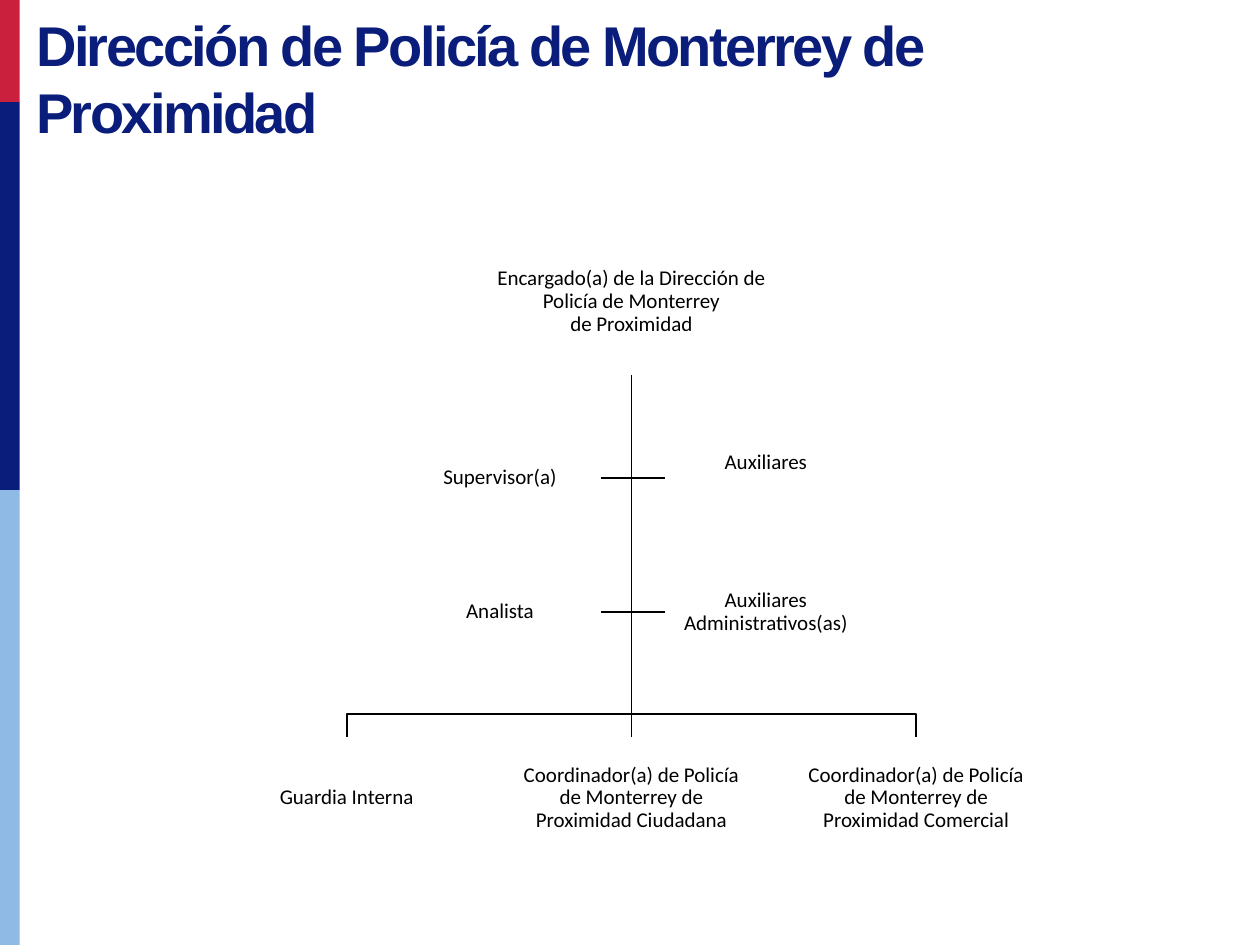
"""Build the organisation chart of the Monterrey proximity police directorate."""
from lxml.etree import SubElement
from pptx import Presentation
from pptx.dml.color import RGBColor
from pptx.enum.shapes import MSO_CONNECTOR, MSO_SHAPE
from pptx.enum.text import MSO_ANCHOR, PP_ALIGN
from pptx.oxml.ns import qn
from pptx.util import Cm, Pt

COLORS = {"red": "CA1F3D", "navy": "0A1D7A", "sky": "8FBAE5", "white": "FFFFFF", "black": "000000"}
TITLE = "Dirección de Policía de Monterrey de Proximidad"
STRIPES = [("red", 2.06), ("navy", 7.82), ("sky", 9.17)]
DIRECTOR = ["Encargado(a) de la Dirección de Policía de Monterrey", "de Proximidad"]
STAFF_ROWS = [
    [("Supervisor(a)", 0.03), ("Auxiliares", 0.64)],
    [("Analista", 0.03), ("Auxiliares Administrativos(as)", 0.03)],
]
COORDINATORS = [
    "Guardia Interna",
    "Coordinador(a) de Policía de Monterrey de Proximidad Ciudadana",
    "Coordinador(a) de Policía de Monterrey de Proximidad Comercial",
]

STRIPE_WIDTH = 0.4
TRUNK_X = 12.73
DIRECTOR_TOP, DIRECTOR_WIDTH, DIRECTOR_HEIGHT = 4.6, 6.4, 2.96
TRUNK_TOP = DIRECTOR_TOP + DIRECTOR_HEIGHT
STAFF_LEFTS, STAFF_WIDTH, STAFF_HEIGHT = (8.05, 13.41), 4.06, 2.08
STAFF_TOP, STAFF_PITCH = 8.59, 2.71
COORDINATOR_TOP, COORDINATOR_WIDTH, COORDINATOR_HEIGHT = 14.86, 4.79, 2.46
COORDINATOR_PITCH, BAR_Y = 5.74, 14.4


def color(name):
    return RGBColor.from_string(COLORS[name])


def add_rectangle(slide, left, top, width, height, fill):
    shape = slide.shapes.add_shape(MSO_SHAPE.RECTANGLE, Cm(left), Cm(top), Cm(width), Cm(height))
    shape.shadow.inherit = False
    shape.fill.solid()
    shape.fill.fore_color.rgb = color(fill)
    shape.line.fill.background()
    return shape


def add_position(slide, lines, left, top, width, height, bottom_inset=0.03):
    frame = add_rectangle(slide, left, top, width, height, "white").text_frame
    frame.word_wrap = True
    frame.vertical_anchor = MSO_ANCHOR.MIDDLE
    frame.margin_left = frame.margin_right = frame.margin_top = Cm(0.03)
    frame.margin_bottom = Cm(bottom_inset)
    paragraph = frame.paragraphs[0]
    paragraph.alignment = PP_ALIGN.CENTER
    paragraph.line_spacing = 0.9
    for index, line in enumerate(lines):
        if index:
            paragraph.add_line_break()
        run = paragraph.add_run()
        run.text = line
        run.font.name = "Calibri"
        run.font.size = Pt(12)
        run.font.color.rgb = color("black")


def style_line(shape):
    shape.line.color.rgb = color("black")
    shape.line.width = Pt(1)


def add_branch(slide, points):
    start, *others = [(Cm(x), Cm(y)) for x, y in points]
    builder = slide.shapes.build_freeform(*start)
    builder.add_line_segments(others, close=False)
    shape = builder.convert_to_shape()
    shape.shadow.inherit = False
    shape.fill.background()
    style_line(shape)


def add_trunk(slide):
    connector = slide.shapes.add_connector(
        MSO_CONNECTOR.STRAIGHT, Cm(TRUNK_X), Cm(TRUNK_TOP), Cm(TRUNK_X), Cm(COORDINATOR_TOP)
    )
    style_line(connector)
    SubElement(connector._element.spPr, qn("a:effectLst"))


def add_title(slide):
    frame = slide.shapes.add_textbox(Cm(0.48), Cm(0.08), Cm(18.95), Cm(3)).text_frame
    frame.word_wrap = True
    run = frame.paragraphs[0].add_run()
    run.text = TITLE
    run.font.name = "Arial"
    run.font.size = Pt(32)
    run.font.bold = True
    run.font.color.rgb = color("navy")
    run.font._element.set("spc", "-150")


def add_chart_lines(slide):
    trunk_start = (TRUNK_X, TRUNK_TOP)
    left_end, right_end = STAFF_LEFTS[0] + STAFF_WIDTH, STAFF_LEFTS[1]
    for row in range(len(STAFF_ROWS)):
        y = STAFF_TOP + row * STAFF_PITCH + STAFF_HEIGHT / 2
        for end in (left_end, right_end):
            add_branch(slide, [trunk_start, (TRUNK_X, y), (end, y)])
    for side in (-1, 1):
        x = TRUNK_X + side * COORDINATOR_PITCH
        add_branch(slide, [trunk_start, (TRUNK_X, BAR_Y), (x, BAR_Y), (x, COORDINATOR_TOP)])
    add_trunk(slide)


def add_positions(slide):
    add_position(slide, DIRECTOR, TRUNK_X - DIRECTOR_WIDTH / 2, DIRECTOR_TOP, DIRECTOR_WIDTH, DIRECTOR_HEIGHT)
    for index, name in enumerate(COORDINATORS):
        left = TRUNK_X + (index - 1) * COORDINATOR_PITCH - COORDINATOR_WIDTH / 2
        add_position(slide, [name], left, COORDINATOR_TOP, COORDINATOR_WIDTH, COORDINATOR_HEIGHT)
    for row, staff in enumerate(STAFF_ROWS):
        top = STAFF_TOP + row * STAFF_PITCH
        for left, (name, inset) in zip(STAFF_LEFTS, staff):
            add_position(slide, [name], left, top, STAFF_WIDTH, STAFF_HEIGHT, inset)


def main():
    presentation = Presentation()
    presentation.slide_width, presentation.slide_height = Cm(25.4), Cm(19.05)
    slide = presentation.slides.add_slide(presentation.slide_layouts[6])
    top = 0
    for fill, height in STRIPES:
        add_rectangle(slide, 0, top, STRIPE_WIDTH, height, fill)
        top += height
    add_chart_lines(slide)
    add_positions(slide)
    add_title(slide)
    presentation.save("out.pptx")


if __name__ == "__main__":
    main()
